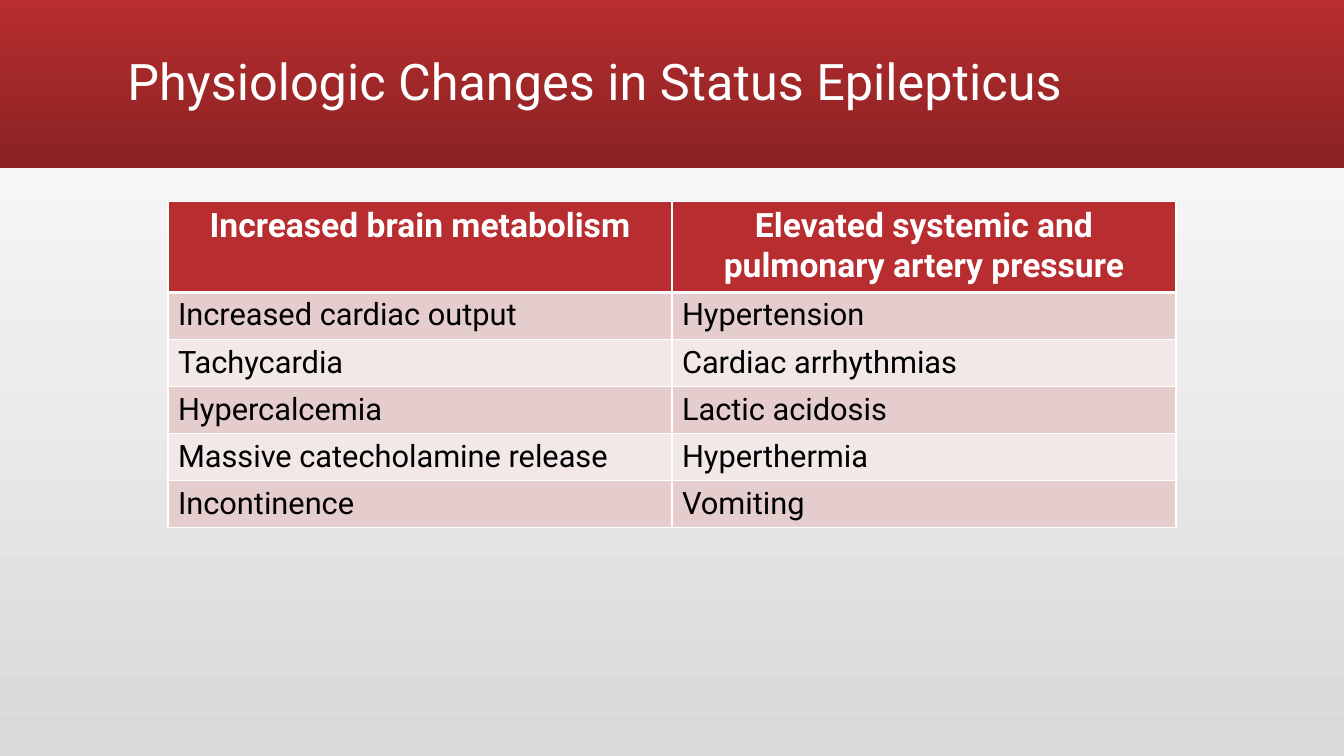
"""Build a slide with a table of physiologic changes in status epilepticus."""
from lxml import etree
from pptx import Presentation
from pptx.dml.color import RGBColor
from pptx.enum.shapes import MSO_SHAPE
from pptx.enum.text import MSO_ANCHOR, PP_ALIGN
from pptx.oxml.ns import qn
from pptx.util import Pt

RECTANGLE = MSO_SHAPE.RECTANGLE
MIDDLE = MSO_ANCHOR.MIDDLE
LEFT, CENTER = PP_ALIGN.LEFT, PP_ALIGN.CENTER
FONT = "Roboto"
COLORS = {
    "red": "B82D2F",
    "dark_red": "8A2223",
    "rose": "E6CDCD",
    "pale_rose": "F3E8E8",
    "gray": "D9D9D9",
    "white": "FFFFFF",
    "black": "000000",
}
TITLE = "Physiologic Changes in Status Epilepticus"
CHANGES = [
    ("Increased brain metabolism", "Elevated systemic and pulmonary artery pressure"),
    ("Increased cardiac output", "Hypertension"),
    ("Tachycardia", "Cardiac arrhythmias"),
    ("Hypercalcemia", "Lactic acidosis"),
    ("Massive catecholamine release", "Hyperthermia"),
    ("Incontinence", "Vomiting"),
]


def color(name):
    return RGBColor.from_string(COLORS[name])


def fill_gradient(fill, names, angle):
    fill.gradient()
    fill.gradient_angle = angle
    for stop, name in zip(fill.gradient_stops, names):
        stop.color.rgb = color(name)


def add_span(para, text, size, name, bold=False):
    span = para.add_run()
    span.text = text
    span.font.name = FONT
    span.font.size = Pt(size)
    span.font.bold = bold
    span.font.color.rgb = color(name)


def add_band(page, width, height):
    band = page.shapes.add_shape(RECTANGLE, 0, 0, width, height)
    band.shadow.inherit = False
    band.line.fill.background()
    fill_gradient(band.fill, ("red", "dark_red"), 270)


def add_title(page, text):
    box = page.shapes.add_textbox(Pt(84), Pt(7.8), Pt(792), Pt(104.4))
    frame = box.text_frame
    frame.word_wrap = True
    frame.vertical_anchor = MIDDLE
    para = frame.paragraphs[0]
    para.line_spacing = 0.9
    add_span(para, text, 36, "white")


def add_border(cell, side, width):
    properties = cell._tc.get_or_add_tcPr()
    line = etree.SubElement(properties, qn(f"a:ln{side}"), w=str(Pt(width)))
    solid = etree.SubElement(line, qn("a:solidFill"))
    etree.SubElement(solid, qn("a:srgbClr"), val=COLORS["white"])


def fill_cell(cell, text, row):
    header = row == 0
    widths = {"L": 1, "R": 1, "T": 3 if row == 1 else 1, "B": 3 if header else 1}
    for side, width in widths.items():
        add_border(cell, side, width)
    cell.fill.solid()
    body = "rose" if row % 2 else "pale_rose"
    cell.fill.fore_color.rgb = color("red" if header else body)
    para = cell.text_frame.paragraphs[0]
    para.alignment = CENTER if header else LEFT
    add_span(para, text, 24 if header else 22, "white" if header else "black", header)


def add_changes_table(page, rows):
    frame = page.shapes.add_table(
        len(rows), len(rows[0]), Pt(120), Pt(144), Pt(720), Pt(232.6)
    )
    table = frame.table
    for row, texts in enumerate(rows):
        table.rows[row].height = Pt(29.5)
        for column, text in enumerate(texts):
            fill_cell(table.cell(row, column), text, row)


def main():
    deck = Presentation()
    deck.slide_width, deck.slide_height = Pt(960), Pt(540)
    page = deck.slides.add_slide(deck.slide_layouts[6])
    fill_gradient(page.background.fill, ("gray", "white"), 90)
    add_band(page, deck.slide_width, Pt(120))
    add_title(page, TITLE)
    add_changes_table(page, CHANGES)
    deck.save("out.pptx")


if __name__ == "__main__":
    main()
